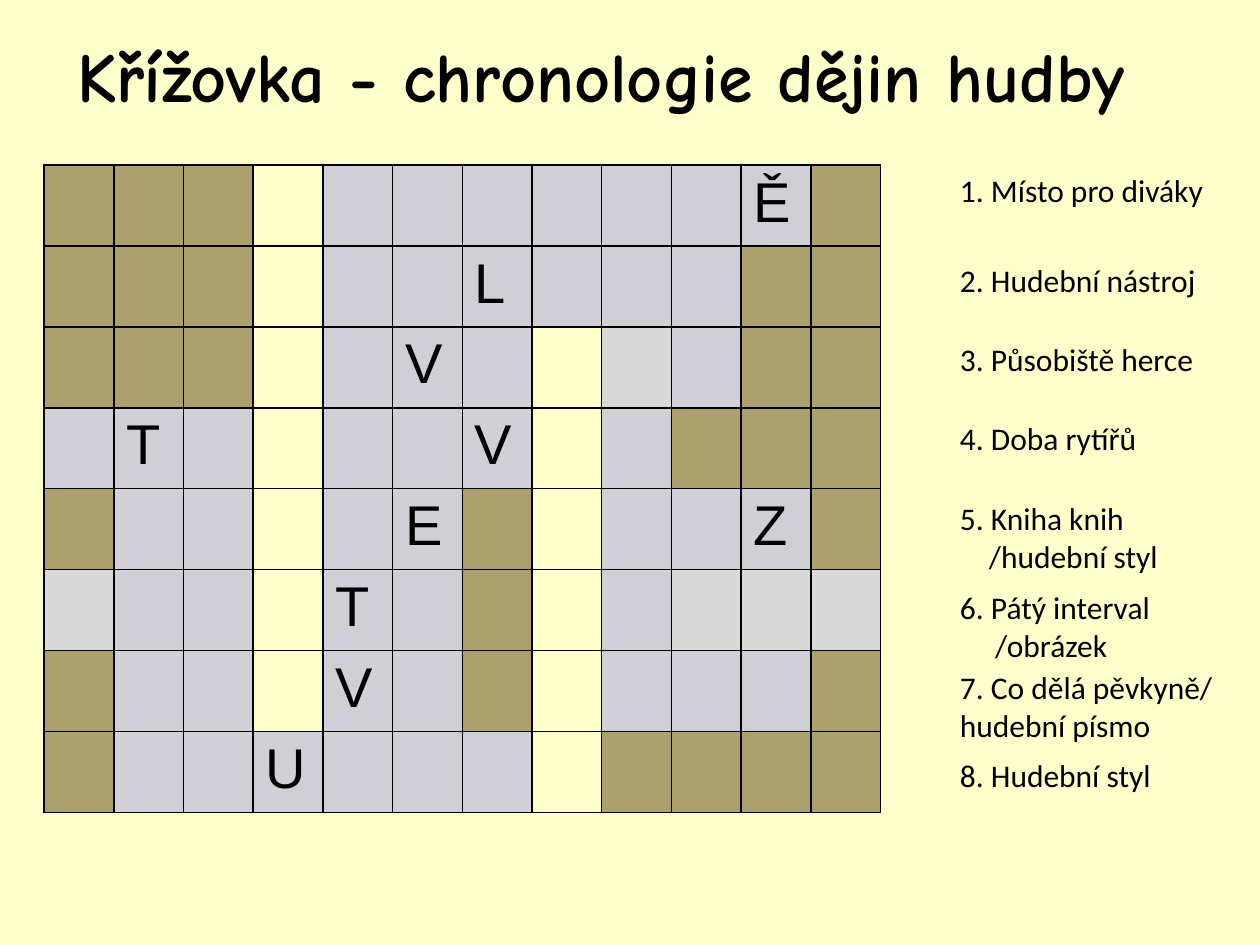
from lxml.etree import SubElement
from pptx import Presentation
from pptx.dml.color import RGBColor
from pptx.enum.text import MSO_AUTO_SIZE, PP_ALIGN
from pptx.oxml.ns import qn
from pptx.util import Inches, Pt

CREAM, BLACK = "FFFFCC", "000000"
CELL_FILLS = {"#": "ACA16C", "*": CREAM, ".": "CFCFD5", "-": "D9D9D9"}
# Any other character is a revealed letter on an answer square.
CROSSWORD = [
    "###*......Ě#",
    "###*..L...##",
    "###*.V.*-.##",
    ".T.*..V*.###",
    "#..*.E#*..Z#",
    "-..*T.#*.---",
    "#..*V.#*...#",
    "#..U...*####",
]
LEFT, TOP = 0.35, 1.31
GRID_WIDTH, GRID_HEIGHT = 6.64, 5.14
CLUE_LEFT = 7.52
# Top, width, lines, indent of the second line
CLUES = [
    (1.31, 2.15, ["1. Místo pro diváky"], 0),
    (2.02, 2.28, ["2. Hudební nástroj"], 0),
    (2.65, 2.07, ["3. Působiště herce"], 0),
    (3.28, 1.62, ["4. Doba rytířů"], 0),
    (3.91, 2.17, ["5. Kniha knih", "/hudební styl"], 0.23),
    (4.62, 2.05, ["6. Pátý interval", "/obrázek"], 0.28),
    (5.25, 2.23, ["7. Co dělá pěvkyně/", "hudební písmo"], 0),
    (5.95, 2.06, ["8. Hudební styl"], 0),
]


def paint(fill, color):
    fill.solid()
    fill.fore_color.rgb = RGBColor.from_string(color)


def add_run(paragraph, text, font, size, bold=False):
    run = paragraph.add_run()
    run.text = text
    run.font.name, run.font.size, run.font.bold = font, Pt(size), bold
    run.font.color.rgb = RGBColor.from_string(BLACK)


def add_frame(slide, left, top, width, height, wrap=True):
    box = slide.shapes.add_textbox(*map(Inches, (left, top, width, height)))
    frame = box.text_frame
    frame.word_wrap = wrap
    frame.auto_size = MSO_AUTO_SIZE.SHAPE_TO_FIT_TEXT
    return frame


def add_title(slide, text):
    frame = add_frame(slide, LEFT, 0.21, 9.03, 0.77)
    frame.margin_right = Inches(0.29)
    paragraph = frame.paragraphs[0]
    paragraph.alignment = PP_ALIGN.CENTER
    add_run(paragraph, text, "Comic Neue", 40, bold=True)


def add_clue(slide, top, width, lines, indent):
    height = 0.4 if len(lines) == 1 else 0.71
    frame = add_frame(slide, CLUE_LEFT, top, width, height, wrap=False)
    for number, line in enumerate(lines):
        paragraph = frame.add_paragraph() if number else frame.paragraphs[0]
        if number and indent:
            paragraph._p.get_or_add_pPr().set("marL", str(Inches(indent)))
        add_run(paragraph, line, "Calibri", 18)


def add_borders(cell):
    """Draw a 1 pt line on all four sides; call before filling the cell."""
    properties = cell._tc.get_or_add_tcPr()
    for side in ("a:lnL", "a:lnR", "a:lnT", "a:lnB"):
        line = SubElement(properties, qn(side), w=str(Pt(1)))
        SubElement(SubElement(line, qn("a:solidFill")), qn("a:srgbClr"), val=BLACK)


def add_crossword(slide, pattern):
    rows, columns = len(pattern), len(pattern[0])
    table = slide.shapes.add_table(
        rows, columns, *map(Inches, (LEFT, TOP, GRID_WIDTH, GRID_HEIGHT))
    ).table
    table.first_row = table.horz_banding = False
    for r, codes in enumerate(pattern):
        for c, code in enumerate(codes):
            cell = table.cell(r, c)
            add_borders(cell)
            paint(cell.fill, CELL_FILLS.get(code, CELL_FILLS["."]))
            if code not in CELL_FILLS:
                add_run(cell.text_frame.paragraphs[0], code, "Arial", 32)


def main():
    deck = Presentation()
    deck.slide_width, deck.slide_height = Inches(10), Inches(7.5)
    slide = deck.slides.add_slide(deck.slide_layouts[6])
    paint(slide.background.fill, CREAM)
    add_title(slide, "Křížovka - chronologie dějin hudby")
    add_crossword(slide, CROSSWORD)
    for clue in CLUES:
        add_clue(slide, *clue)
    deck.save("out.pptx")


if __name__ == "__main__":
    main()
